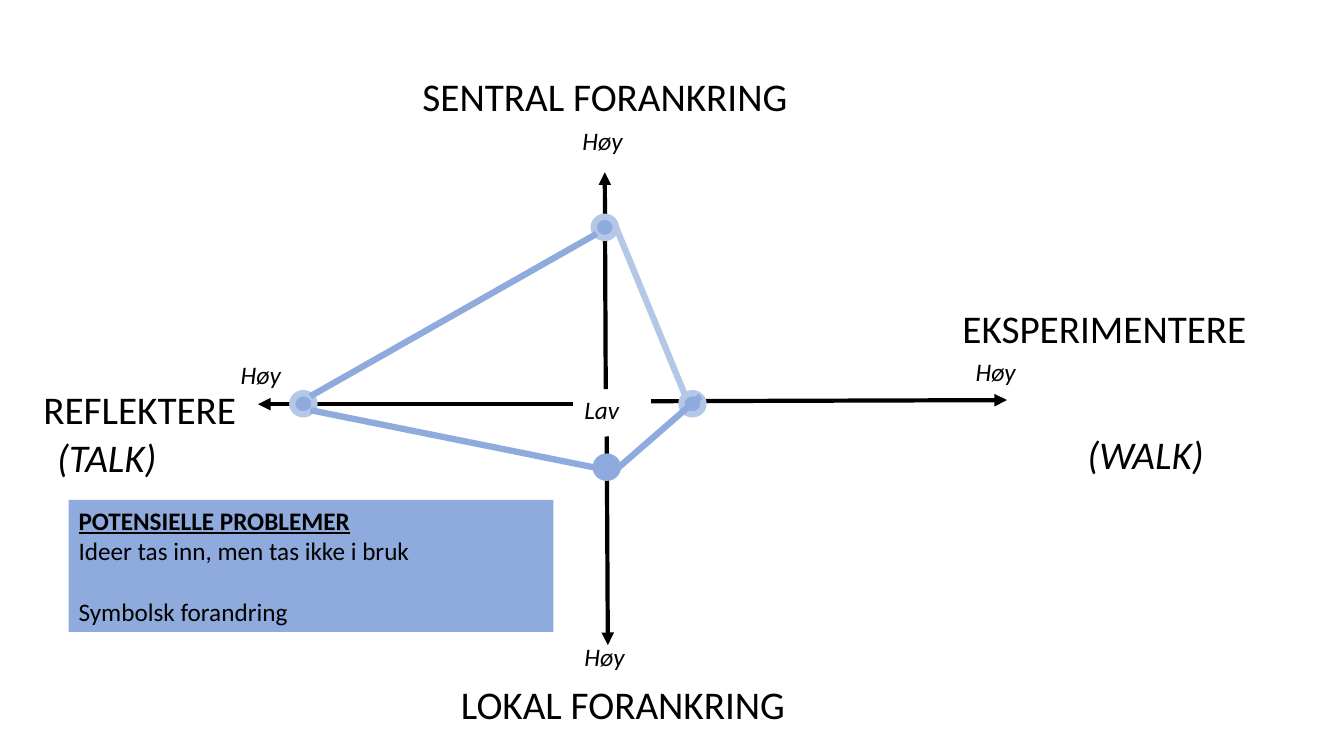
from pptx import Presentation
from pptx.dml.color import RGBColor
from pptx.enum.shapes import MSO_CONNECTOR as Line, MSO_SHAPE as Shape
from pptx.enum.text import MSO_ANCHOR as Anchor, PP_ALIGN as Align
from pptx.oxml.ns import qn
from pptx.util import Pt
from lxml.etree import SubElement

COLORS = {"ink": "000000", "blue": "8FAADC", "pale": "B4C7E7"}
FONT = "Calibri"
AXIS_WIDTH, EDGE_WIDTH = 3, 4.5
DOT_WIDTH, DOT_HEIGHT = 15.8, 15.1

# Content: lengths in points
AXES = [  # start, end (arrowhead)
    ((433.4, 311.8), (434.2, 460.8)),
    ((432.7, 277.9), (432, 123.1)),
    ((465.1, 286.6), (719.3, 285.8)),
    ((409, 288.7), (184.3, 288.7)),
]
HEADING = {"size": Pt(28)}
POLE = {"size": Pt(28), "italic": True}
SCALE = {"size": Pt(18), "italic": True}
LABELS = [  # text, (left, top, width, height), format, alignment
    ("REFLEKTERE", (23.8, 271.4, 164.9, 41), HEADING, Align.LEFT),
    ("EKSPERIMENTERE", (680.4, 213.8, 237.6, 41), HEADING, Align.LEFT),
    ("SENTRAL FORANKRING", (259.9, 48.2, 344.2, 74.9), HEADING, Align.CENTER),
    ("LOKAL FORANKRING", (202.3, 482.4, 485.3, 41), HEADING, Align.CENTER),
    ("(WALK)", (769.7, 303.8, 254.9, 41), POLE, Align.LEFT),
    ("(TALK)", (33.8, 306, 208.1, 41), POLE, Align.LEFT),
]
SCALE_MARKS = [  # text, left, top
    ("Lav", 410.4, 277.9),
    ("Høy", 409, 85.7),
    ("Høy", 689.8, 251.3),
    ("Høy", 164.9, 253.4),
    ("Høy", 410.4, 454.3),
]
LABELS += [(text, (left, top, 69.1, 28.8), SCALE, Align.LEFT)
           for text, left, top in SCALE_MARKS]
DOTS = [  # centre, outline
    ((494.6, 288.4), "pale"),
    ((216.7, 288.4), "pale"),
    ((432, 162.4), "pale"),
    ((433.4, 333.7), "blue"),
]
EDGES = [  # start, end, colour
    ((439.9, 162), (489.6, 283), "pale"),
    ((500.4, 283), (433.4, 341.3), "blue"),
    ((221.8, 293), (425.5, 334.1), "blue"),
    ((221.8, 283), (426.2, 167), "blue"),
]
PROBLEM_BOX = (49, 357.1, 346.3, 94.3)
PROBLEMS = [  # text, format, space before
    ("POTENSIELLE PROBLEMER", {"bold": True, "underline": True}, 0),
    ("Ideer tas inn, men tas ikke i bruk", {}, 0),
    ("Symbolsk forandring", {}, 22),
]


def color(name):
    return RGBColor.from_string(COLORS[name])


def add_line(start, end, name, width, arrow=False):
    line = page.shapes.add_connector(
        Line.STRAIGHT, *(Pt(value) for value in start + end))
    line.line.color.rgb = color(name)
    line.line.width = Pt(width)
    if arrow:
        SubElement(line.line._get_or_add_ln(), qn("a:tailEnd"), type="triangle")
    SubElement(line._element.spPr, qn("a:effectLst"))


def add_shape(kind, frame, outline=None):
    shape = page.shapes.add_shape(kind, *(Pt(value) for value in frame))
    shape.shadow.inherit = False
    shape.fill.solid()
    shape.fill.fore_color.rgb = color("blue")
    if outline:
        shape.line.color.rgb = color(outline)
        shape.line.width = Pt(EDGE_WIDTH)
    else:
        shape.line.fill.background()
    return shape


def write(para, text, formats, align):
    para.alignment = align
    span = para.add_run()
    span.text = text
    span.font.color.rgb = color("ink")
    for key, value in {"name": FONT, **formats}.items():
        setattr(span.font, key, value)


deck = Presentation()
deck.slide_width, deck.slide_height = Pt(960), Pt(540)
page = deck.slides.add_slide(deck.slide_layouts[6])

# Axes
for start, end in AXES:
    add_line(start, end, "ink", AXIS_WIDTH, arrow=True)

# Axis names and scale marks
for text, frame, formats, align in LABELS:
    box = page.shapes.add_textbox(*(Pt(value) for value in frame))
    box.text_frame.word_wrap = True
    write(box.text_frame.paragraphs[0], text, formats, align)

# Profile: dots on the axes, joined by edges
for (x, y), outline in DOTS:
    add_shape(Shape.OVAL, (x - DOT_WIDTH / 2, y - DOT_HEIGHT / 2,
                           DOT_WIDTH, DOT_HEIGHT), outline)
for start, end, name in EDGES:
    add_line(start, end, name, EDGE_WIDTH)

# Problem box
frame = add_shape(Shape.RECTANGLE, PROBLEM_BOX).text_frame
frame.word_wrap = True
frame.vertical_anchor = Anchor.TOP
for index, (text, formats, gap) in enumerate(PROBLEMS):
    para = frame.add_paragraph() if index else frame.paragraphs[0]
    para.space_before = Pt(gap)
    write(para, text, {"size": Pt(18), **formats}, Align.LEFT)

deck.save("out.pptx")
